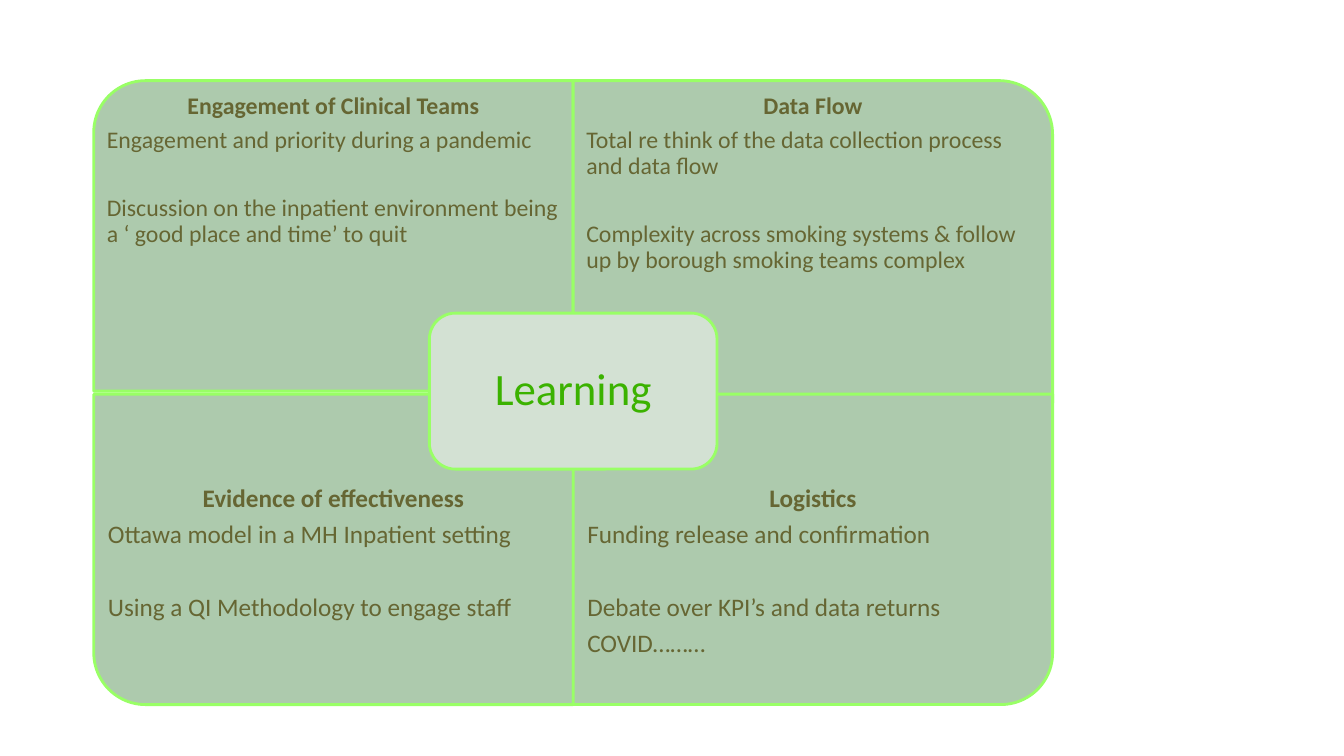
from collections import namedtuple
from dataclasses import dataclass

from pptx import Presentation, util as u
from pptx.dml.color import RGBColor
from pptx.enum import shapes, text

Box = namedtuple("Box", "left top width height")
Quadrant = namedtuple("Quadrant", "column row rotation depth size inset heading points")


@dataclass(frozen=True)
class Theme:
    """Colours, font and type sizes of the slide."""
    panel: str = "ADCAAD"
    hub: str = "D3E1D3"
    border: str = "99FF66"
    body: str = "666633"
    accent: str = "3BB200"
    font: str = "Calibri"
    border_width: float = 2
    upper_size: int = 17
    lower_size: int = 18
    hub_size: int = 32
    line_spacing: float = 0.9
    gap_share: float = 0.35
    line_height: float = 1.22


THEME = Theme()
SLIDE_SIZE = (13.33, 7.5)
BOARD = Box(0.93, 0.8, 9.51, 6.19)
ROW_HEIGHT = 3.08
TEXT_SHARE = 0.75
HUB_SHARE = (0.3, 0.25)

QUADRANTS = [
    Quadrant(0, 0, 270, 3.08, THEME.upper_size, 0.13, "Engagement of Clinical Teams", [
        ("Engagement and priority during a pandemic", False),
        ("Discussion on the inpatient environment being a ‘ good place and time’ to quit", True)]),
    Quadrant(1, 0, 0, 3.2, THEME.upper_size, 0.13, "Data Flow", [
        ("Total re think of the data collection process and data flow", False),
        ("Complexity across smoking systems & follow up by borough smoking teams complex", True)]),
    Quadrant(0, 1, 180, 3.08, THEME.lower_size, 0.14, "Evidence of effectiveness", [
        ("Ottawa model in a MH Inpatient setting", False),
        ("Using a QI Methodology to engage staff", True)]),
    Quadrant(1, 1, 90, 3.08, THEME.lower_size, 0.14, "Logistics", [
        ("Funding release and confirmation", False),
        ("Debate over KPI’s and data returns", True),
        ("COVID………", False)]),
]


def apply_format(target, **values):
    """Set each named attribute on the target."""
    for name, value in values.items():
        setattr(target, name, value)


def add_panel(slide, kind, box, fill, rotation=0):
    """Draw a bordered shape whose outline fills the box after rotation."""
    width, height = box.width, box.height
    if rotation % 180:
        width, height = height, width
    left = box.left + (box.width - width) / 2
    top = box.top + (box.height - height) / 2
    shape = slide.shapes.add_shape(kind, *map(u.Inches, (left, top, width, height)))
    shape.rotation = rotation
    shape.shadow.inherit = False
    shape.fill.solid()
    shape.fill.fore_color.rgb = RGBColor.from_string(fill)
    shape.line.color.rgb = RGBColor.from_string(THEME.border)
    shape.line.width = u.Pt(THEME.border_width)
    return shape


def set_frame(frame, inset, anchor):
    """Give a text frame equal margins, wrapping and an anchor."""
    margin = u.Inches(inset)
    apply_format(frame, margin_left=margin, margin_right=margin, margin_top=margin,
                 margin_bottom=margin, word_wrap=True, vertical_anchor=anchor)


def write_paragraph(paragraph, words, size, colour, centred=False, bold=False, spaced=False):
    """Write one paragraph, with a line of space above it if spaced."""
    gap = size * THEME.gap_share
    blank_line = size * THEME.line_height * THEME.line_spacing + gap
    apply_format(paragraph, line_spacing=THEME.line_spacing, space_after=u.Pt(gap),
                 space_before=u.Pt(blank_line if spaced else 0),
                 alignment=text.PP_ALIGN.CENTER if centred else text.PP_ALIGN.LEFT)
    run = paragraph.add_run()
    run.text = words
    apply_format(run.font, name=THEME.font, size=u.Pt(size), bold=bold)
    run.font.color.rgb = RGBColor.from_string(colour)


def add_quadrant(slide, board, quadrant):
    """Place one quadrant of the board with its heading and points."""
    width = board.width / 2
    left = board.left + quadrant.column * width
    top = board.top + quadrant.row * (board.height - ROW_HEIGHT)
    box = Box(left, top, width, quadrant.depth)
    add_panel(slide, shapes.MSO_SHAPE.ROUND_1_RECTANGLE, box, THEME.panel, quadrant.rotation)

    text_height = box.height * TEXT_SHARE
    text_top = top + quadrant.row * (box.height - text_height)
    textbox = slide.shapes.add_textbox(*map(u.Inches, (left, text_top, width, text_height)))
    frame = textbox.text_frame
    set_frame(frame, quadrant.inset, text.MSO_ANCHOR.TOP)
    write_paragraph(frame.paragraphs[0], quadrant.heading, quadrant.size, THEME.body,
                    centred=True, bold=True)
    for words, spaced in quadrant.points:
        write_paragraph(frame.add_paragraph(), words, quadrant.size, THEME.body, spaced=spaced)


def add_hub(slide, board, title):
    """Place the rounded title over the seam of the four quadrants."""
    width, height = board.width * HUB_SHARE[0], board.height * HUB_SHARE[1]
    box = Box(board.left + (board.width - width) / 2,
              board.top + ROW_HEIGHT - height / 2, width, height)
    hub = add_panel(slide, shapes.MSO_SHAPE.ROUNDED_RECTANGLE, box, THEME.hub)
    set_frame(hub.text_frame, 0.13, text.MSO_ANCHOR.MIDDLE)
    write_paragraph(hub.text_frame.paragraphs[0], title, THEME.hub_size, THEME.accent, centred=True)


def build_matrix_slide(presentation, board):
    """Build the learning matrix slide within the board."""
    slide = presentation.slides.add_slide(presentation.slide_layouts[6])
    for quadrant in QUADRANTS:
        add_quadrant(slide, board, quadrant)
    add_hub(slide, board, "Learning")


def main():
    """Create and save the presentation."""
    presentation = Presentation()
    presentation.slide_width, presentation.slide_height = map(u.Inches, SLIDE_SIZE)
    build_matrix_slide(presentation, BOARD)
    presentation.save("out.pptx")


if __name__ == "__main__":
    main()
